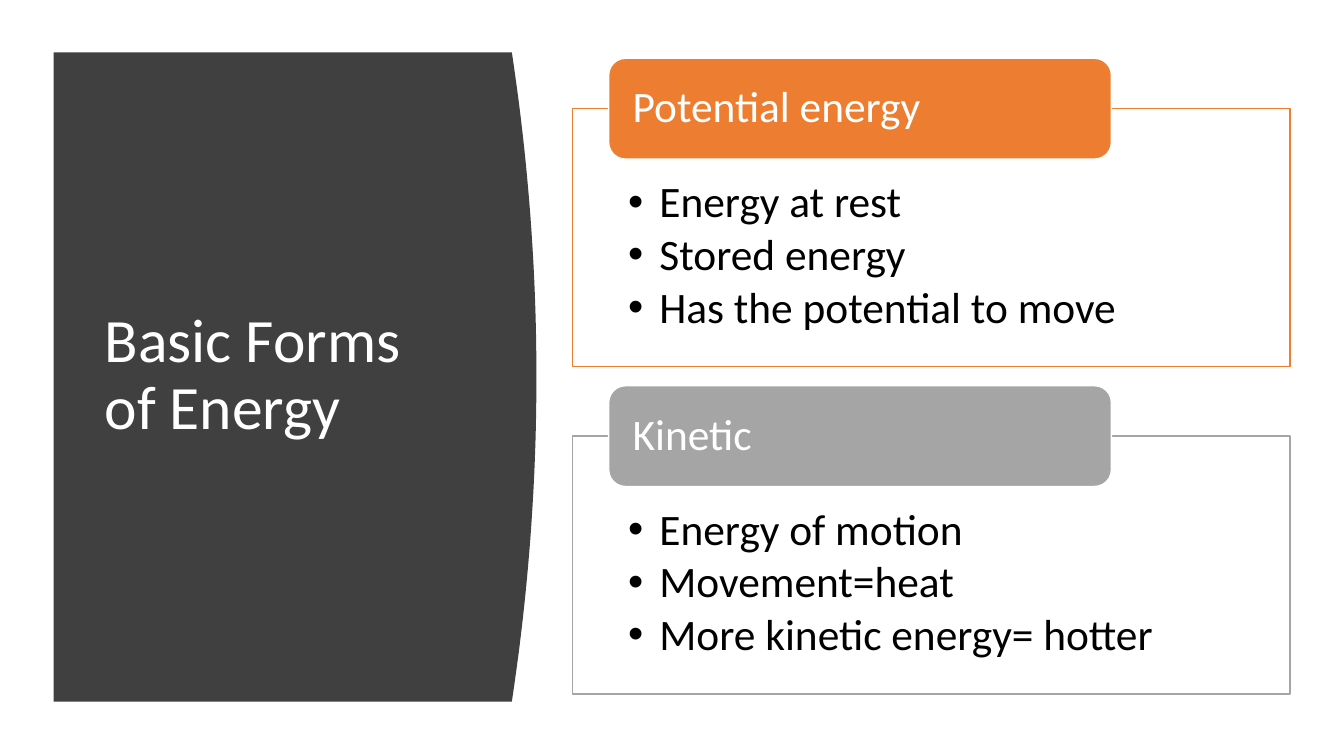
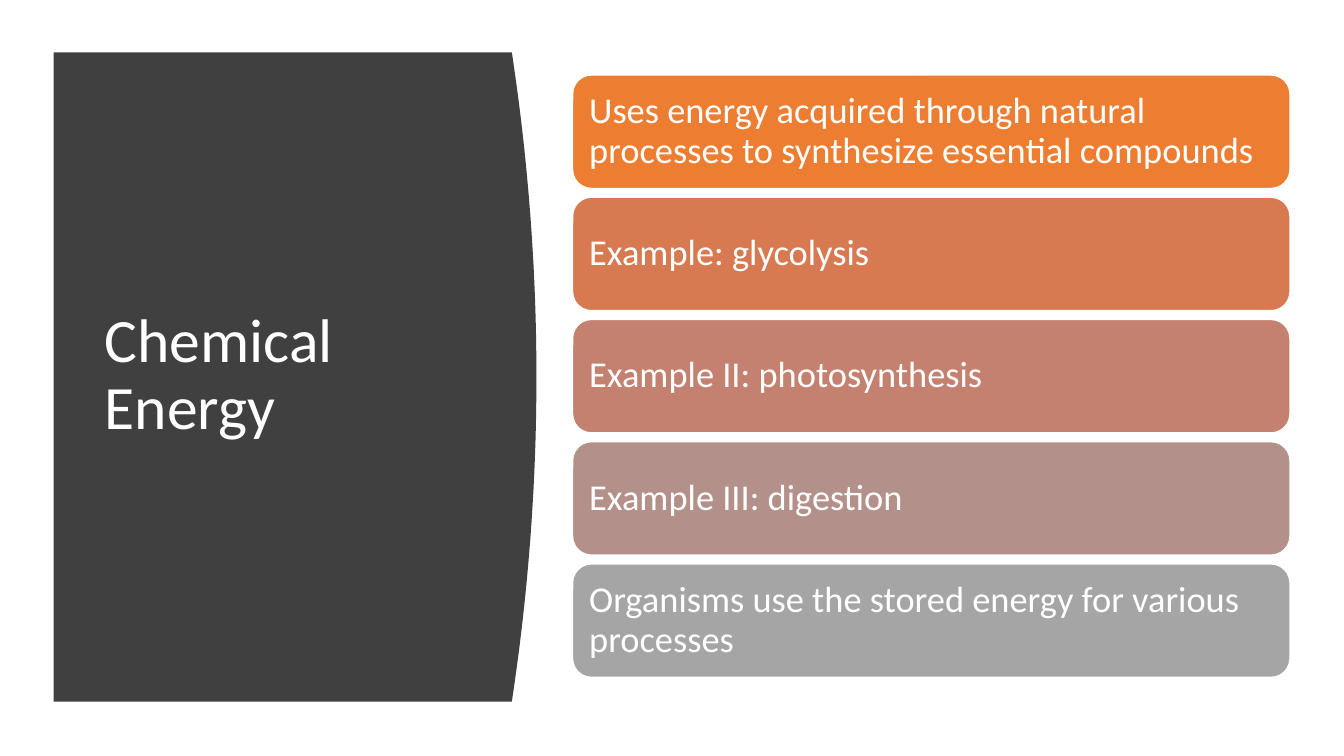
"""Build two slides on forms of energy, each with a curved title panel."""
from lxml import etree
from pptx import Presentation
from pptx.dml.color import RGBColor
from pptx.enum.shapes import MSO_SHAPE
from pptx.enum.text import MSO_ANCHOR, PP_ALIGN
from pptx.oxml.ns import qn
from pptx.util import Cm, Pt

RECT, ROUND = MSO_SHAPE.RECTANGLE, MSO_SHAPE.ROUNDED_RECTANGLE
TOP, MIDDLE = MSO_ANCHOR.TOP, MSO_ANCHOR.MIDDLE
LEFT = PP_ALIGN.LEFT

HUES = {
    "panel": "404040", "white": "FFFFFF", "black": "000000",
    "orange": "ED7D31", "rust": "D87A51", "rose": "C48170",
    "mauve": "B4908B", "gray": "A5A5A5",
}
INK = {name: RGBColor.from_string(code) for name, code in HUES.items()}

TITLE = {"vertical_anchor": MIDDLE, "word_wrap": True}
HEAD = {**TITLE, "margin_left": Cm(0.48), "margin_right": Cm(0.48),
        "margin_top": 0, "margin_bottom": 0}
BAR = {**TITLE, "margin_left": Cm(0.28), "margin_right": Cm(0.28),
       "margin_top": Cm(0.28), "margin_bottom": Cm(0.28)}
BODY = {"vertical_anchor": TOP, "word_wrap": True,
        "margin_left": Cm(1.4), "margin_right": Cm(1.4),
        "margin_top": Cm(1.8), "margin_bottom": Cm(0.61)}
PARA = {"alignment": LEFT, "line_spacing": 0.9}
FONT = {"name": "Calibri"}

LEAD, WIDE = 14.43, 18.08
EDGE, CREST = 12.9, 0.62
HIGH, LOW = 1.32, 17.68
STEPS = 40

TOPICS = [
    ("Potential energy", "orange",
     ["Energy at rest", "Stored energy", "Has the potential to move"]),
    ("Kinetic", "gray",
     ["Energy of motion", "Movement=heat", "More kinetic energy= hotter"]),
]
FACTS = [
    ("Uses energy acquired through natural processes to synthesize "
     "essential compounds", "orange"),
    ("Example: glycolysis", "rust"),
    ("Example II: photosynthesis", "rose"),
    ("Example III: digestion", "mauve"),
    ("Organisms use the stored energy for various processes", "gray"),
]


def write(shape, lines, frame, size, hue, after=0):
    """Fill a shape with formatted lines of text."""
    text = shape.text_frame
    text.text = "\n".join(lines)
    jobs = [(text, frame)]
    for para in text.paragraphs:
        jobs.append((para, {**PARA, "space_after": Pt(after)}))
        jobs.append((para.font, {**FONT, "size": Pt(size)}))
        para.font.color.rgb = INK[hue]
    for item, values in jobs:
        for key, value in values.items():
            setattr(item, key, value)


def block(slide, kind, place, fill, line):
    """Add a filled, outlined shape placed in centimetres."""
    shape = slide.shapes.add_shape(kind, *map(Cm, place))
    shape.shadow.inherit = False
    shape.fill.solid()
    shape.fill.fore_color.rgb = INK[fill]
    shape.line.color.rgb = INK[line]
    shape.line.width = Pt(1)
    return shape


deck = Presentation()
deck.slide_width, deck.slide_height = Cm(33.87), Cm(19.05)

curve = []
for step in range(STEPS + 1):
    part = step / STEPS
    bulge = CREST * (1 - (2 * part - 1) ** 2)
    curve.append((Cm(EDGE + bulge), Cm(HIGH + part * (LOW - HIGH))))

slides = []
for title in ("Basic Forms of Energy", "Chemical Energy"):
    slide = deck.slides.add_slide(deck.slide_layouts[6])
    pen = slide.shapes.build_freeform(Cm(1.35), Cm(HIGH))
    pen.add_line_segments(curve + [(Cm(1.35), Cm(LOW))], close=True)
    panel = pen.convert_to_shape()
    panel.shadow.inherit = False
    panel.fill.solid()
    panel.fill.fore_color.rgb = INK["panel"]
    panel.line.fill.background()
    label = slide.shapes.add_textbox(Cm(2.39), Cm(2.82), Cm(9.5), Cm(13.31))
    write(label, [title], TITLE, 44, "white")
    slides.append(slide)

forms, chem = slides

for row, (name, hue, points) in enumerate(TOPICS):
    top = 2.74 + row * 8.25
    box = block(forms, RECT, (LEAD, top, WIDE, 6.5), "white", hue)
    tint = box.element.spPr.find(qn("a:solidFill"))[0]
    etree.SubElement(tint, qn("a:alpha"), val="90000")
    write(box, points, BODY, 31, "black", 4.2)
    for para in box.text_frame.paragraphs:
        props = para._p.get_or_add_pPr()
        props.set("marL", str(Cm(0.79)))
        props.set("indent", str(-Cm(0.79)))
        etree.SubElement(props, qn("a:buFont"), typeface="Arial")
        etree.SubElement(props, qn("a:buChar"), char="•")
        props.append(props.find(qn("a:defRPr")))
    head = block(forms, ROUND, (15.34, top - 1.27, 12.67, 2.54), hue, "white")
    write(head, [name], HEAD, 31, "white")

for row, (fact, hue) in enumerate(FACTS):
    place = (LEAD, 1.89 + row * 3.08, WIDE, 2.86)
    bar = block(chem, ROUND, place, hue, "white")
    write(bar, [fact], BAR, 26, "white")

deck.save("out.pptx")
